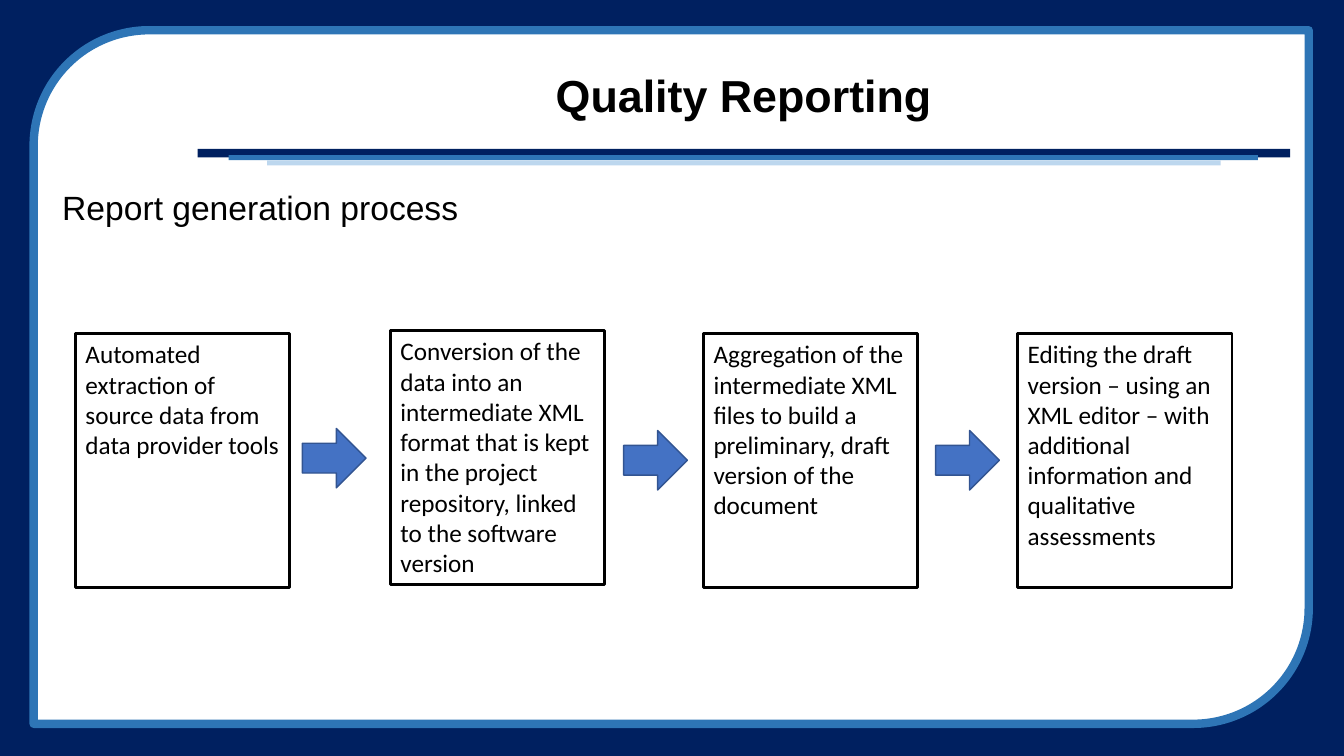
import pptx
import pptx.util
import pptx.dml.color
import pptx.enum.shapes
import pptx.enum.text

Pt = pptx.util.Pt
RGB = pptx.dml.color.RGBColor
SHAPE = pptx.enum.shapes.MSO_SHAPE
ALIGN = pptx.enum.text.PP_ALIGN
ANCHOR = pptx.enum.text.MSO_ANCHOR

NAVY = RGB(0x00, 0x20, 0x60)
BLUE = RGB(0x2E, 0x75, 0xB6)
PALE_BLUE = RGB(0xBD, 0xD7, 0xEE)
ARROW_FILL = RGB(0x44, 0x72, 0xC4)
ARROW_LINE = RGB(0x32, 0x54, 0x91)
WHITE = RGB(0xFF, 0xFF, 0xFF)
BLACK = RGB(0x00, 0x00, 0x00)

prs = pptx.Presentation()
prs.slide_width, prs.slide_height = Pt(960), Pt(540)
slide = prs.slides.add_slide(prs.slide_layouts[6])


def add_shape(kind, left, top, width, height, fill=None, line=None, line_width=1):
    s = slide.shapes.add_shape(kind, Pt(left), Pt(top), Pt(width), Pt(height))
    s.shadow.inherit = False
    if fill is None:
        s.fill.background()
    else:
        s.fill.solid()
        s.fill.fore_color.rgb = fill
    if line is None:
        s.line.fill.background()
    else:
        s.line.color.rgb = line
        s.line.width = Pt(line_width)
    return s


def set_text(s, text, font, size, align=ALIGN.LEFT, anchor=ANCHOR.TOP, spacing=1.0, bold=False):
    tf = s.text_frame
    tf.word_wrap = True
    tf.vertical_anchor = anchor
    tf.text = text
    p = tf.paragraphs[0]
    p.alignment = align
    p.line_spacing = spacing
    r = p.runs[0]
    r.font.name = font
    r.font.size = Pt(size)
    r.font.bold = bold
    r.font.color.rgb = BLACK


# Background and rounded frame
add_shape(SHAPE.RECTANGLE, 0, 0, 960, 540, NAVY)
add_shape(SHAPE.ROUND_2_DIAG_RECTANGLE, 24, 21.6, 910.8, 495.4, WHITE, BLUE, 6)

# Stepped rule under the title
for left, top, width, height, color in (
    (141.1, 106.4, 780.5, 6, NAVY),
    (163.4, 110.9, 735.1, 3.6, BLUE),
    (190.8, 114.5, 681.1, 3.6, PALE_BLUE),
):
    add_shape(SHAPE.RECTANGLE, left, top, width, height, color)

# Title and subtitle
title = slide.shapes.add_textbox(Pt(141.1), Pt(35.3), Pt(780.5), Pt(69.8))
set_text(title, "Quality Reporting", "Arial", 32, ALIGN.CENTER, ANCHOR.MIDDLE, 0.9, True)
subtitle = slide.shapes.add_textbox(Pt(37.4), Pt(133.2), Pt(866.2), Pt(42.5))
set_text(subtitle, "Report generation process", "Arial", 24, spacing=0.9)

# Process steps
steps = (
    (54, 238.3, "Automated extraction of source data from data provider tools"),
    (279, 236.2, "Conversion of the data into an intermediate XML format that is kept "
                 "in the project repository, linked to the software version"),
    (502.6, 238.3, "Aggregation of the intermediate XML files to build a preliminary, "
                   "draft version of the document"),
    (727, 238.3, "Editing the draft version – using an XML editor – with additional "
                 "information and qualitative assessments"),
)
for left, top, text in steps:
    box = add_shape(SHAPE.RECTANGLE, left, top, 153, 181.5, line=BLACK, line_width=2)
    set_text(box, text, "Calibri", 18)

# Arrows between the steps
for left, top in ((216, 306), (445.5, 307.5), (668.3, 307.5)):
    add_shape(SHAPE.RIGHT_ARROW, left, top, 45.5, 42.5, ARROW_FILL, ARROW_LINE)

prs.save("out.pptx")
